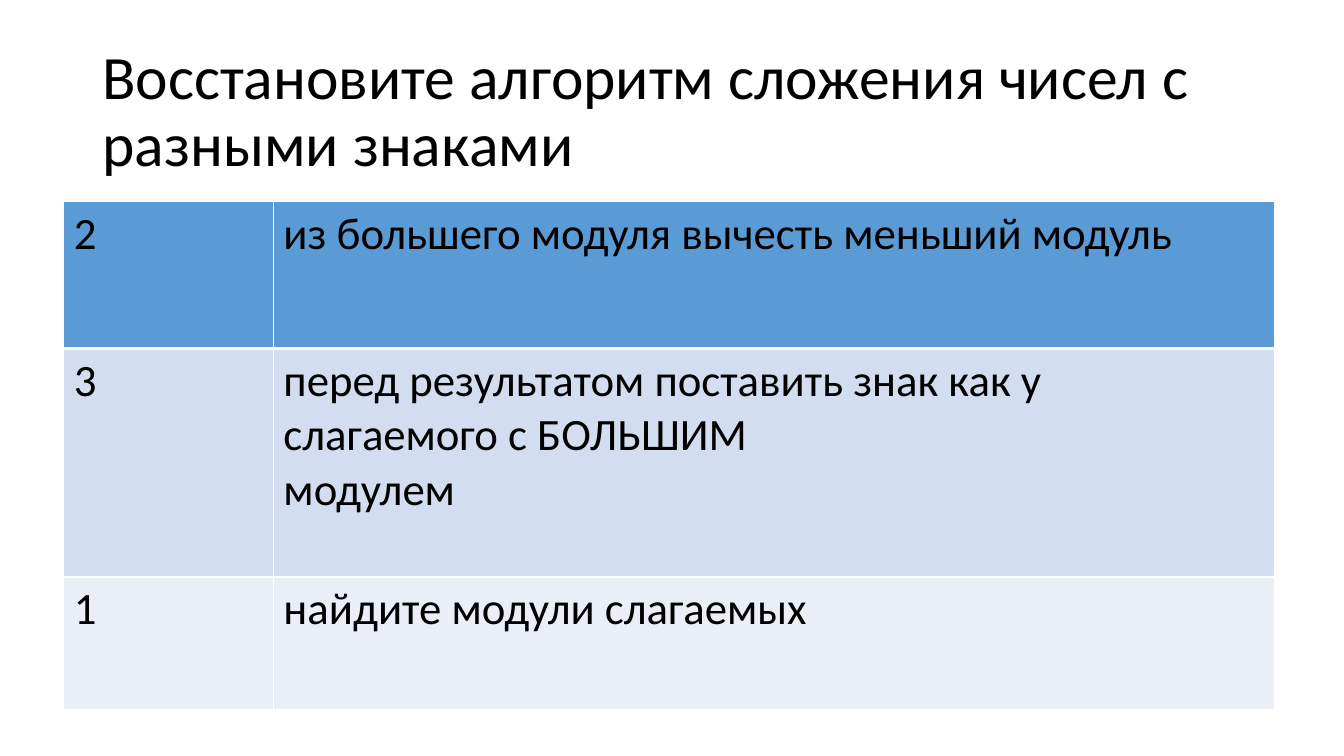
from dataclasses import dataclass

from lxml import etree
from pptx import Presentation
from pptx.dml.color import RGBColor
from pptx.enum import text
from pptx.oxml import ns
from pptx.util import Cm, Pt

FONT = "Calibri"
BLACK = "000000"
WHITE = "FFFFFF"


@dataclass
class Step:
    number: str
    lines: list[str]
    fill: str
    height: float
    top_border: float = 1
    bottom_border: float = 1


STEPS = [
    Step("2", ["из большего модуля вычесть меньший модуль"],
         "5B9BD5", 3.7, bottom_border=3),
    Step("3", ["перед результатом поставить знак как у слагаемого с БОЛЬШИМ",
               "модулем"],
         "D2DEEF", 5.76, top_border=3),
    Step("1", ["найдите модули слагаемых"], "EAEFF7", 3.33),
]
COLUMN_WIDTHS = [5.28, 25.22]


def colour(value: str) -> RGBColor:
    return RGBColor.from_string(value)


def add_span(para, words: str, size: float) -> None:
    span = para.add_run()
    span.text = words
    span.font.name = FONT
    span.font.size = Pt(size)
    span.font.bold = False
    span.font.color.rgb = colour(BLACK)


def add_border(cell, side: str, width: float) -> None:
    properties = cell._tc.get_or_add_tcPr()
    line = etree.SubElement(properties, ns.qn(f"a:ln{side}"), w=str(Pt(width)))
    fill = etree.SubElement(line, ns.qn("a:solidFill"))
    etree.SubElement(fill, ns.qn("a:srgbClr"), val=WHITE)


def fill_cell(cell, lines: list[str], step: Step) -> None:
    borders = {"L": 1, "R": 1, "T": step.top_border, "B": step.bottom_border}
    for side, width in borders.items():
        add_border(cell, side, width)
    cell.fill.solid()
    cell.fill.fore_color.rgb = colour(step.fill)
    para = cell.text_frame.paragraphs[0]
    for index, words in enumerate(lines):
        if index:
            para.add_line_break()
        add_span(para, words, 32)


def add_title(page, words: str) -> None:
    title = page.shapes.title
    title.left, title.top = Cm(2.33), Cm(1.01)
    title.width, title.height = Cm(29.21), Cm(3.68)
    frame = title.text_frame
    frame.word_wrap = True
    frame.auto_size = text.MSO_AUTO_SIZE.NONE
    frame.vertical_anchor = text.MSO_ANCHOR.MIDDLE
    para = frame.paragraphs[0]
    para.alignment = text.PP_ALIGN.LEFT
    para.line_spacing = 0.9
    add_span(para, words, 44)


def add_steps(page, steps: list[Step]) -> None:
    table = page.shapes.add_table(
        len(steps), len(COLUMN_WIDTHS), Cm(1.61), Cm(5.08),
        Cm(sum(COLUMN_WIDTHS)), Cm(sum(step.height for step in steps)),
    ).table
    table.first_row = False
    table.horz_banding = False
    for column, width in zip(table.columns, COLUMN_WIDTHS):
        column.width = Cm(width)
    for row, step in zip(table.rows, steps):
        row.height = Cm(step.height)
        for cell, lines in zip(row.cells, ([step.number], step.lines)):
            fill_cell(cell, lines, step)


def main() -> None:
    deck = Presentation()
    deck.slide_width, deck.slide_height = Cm(33.87), Cm(19.05)
    page = deck.slides.add_slide(deck.slide_layouts.get_by_name("Title Only"))
    add_title(page, "Восстановите алгоритм сложения чисел с разными знаками")
    add_steps(page, STEPS)
    deck.save("out.pptx")


if __name__ == "__main__":
    main()
